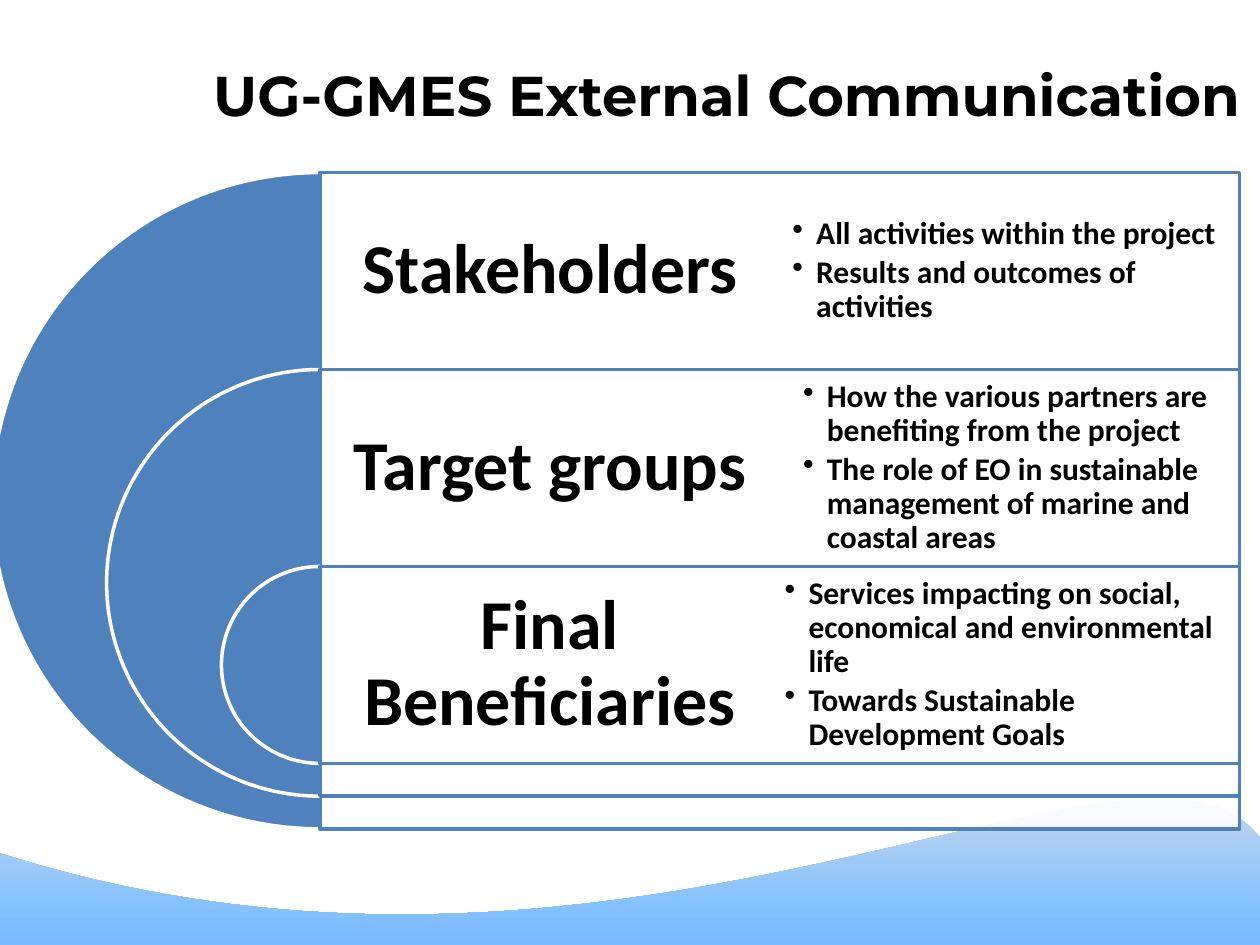
"""Build the UG-GMES external communication slide with nested half circles and panels."""
from lxml import etree
from pptx import Presentation
from pptx import util as u
from pptx.dml.color import RGBColor
from pptx.enum import shapes, text
from pptx.oxml import parse_xml
from pptx.oxml.ns import nsdecls, qn

TITLE = "UG-GMES External Communication"
AUDIENCES = [
    ("Stakeholders", 10.13, [
        "All activities within the project",
        "Results and outcomes of activities"]),
    ("Target groups", 9.7, [
        "How the various partners are benefiting from the project",
        "The role of EO in sustainable management of marine and coastal areas"]),
    ("Final Beneficiaries", 10.44, [
        "Services impacting on social, economical and environmental life",
        "Towards Sustainable Development Goals"]),
]
BLUE, WHITE, BLACK = "4F81BD", "FFFFFF", "000000"
WAVE_STOPS = [(0, "C4D6EB"), (72, "85C2FF"), (100, "7AB8FF")]
WAVE_CURVE = [(0, 17.2), (12.73, 21.26), (23.09, 13.74), (25.4, 16.89)]
WAVE_BOTTOM, WAVE_STEPS = 19.05, 80
TOP, ROW, CENTRE = 3.48, 3.97, 6.45
DIAMETER, DIAMETER_STEP = 13.23, 4.63
PANEL_WIDTH, HEADING_WIDTH, LIST_CENTRE = 18.54, 9.27, 20.36
INDENT = u.Cm(0.48)
HEADING_FONT = {"name": "Calibri", "size": u.Pt(40), "bold": True}
LIST_FONT = {**HEADING_FONT, "size": u.Pt(18)}
TITLE_FONT = {"name": "Montserrat", "size": u.Pt(32), "bold": True}


def box(*lengths):
    return [u.Cm(length) for length in lengths]


def paint(colour_format, colour):
    colour_format.rgb = RGBColor.from_string(colour)


def apply(target, values):
    for name, value in values.items():
        setattr(target, name, value)


def style_font(paragraph, values):
    apply(paragraph.font, values)
    paint(paragraph.font.color, BLACK)


def add_wave(slide):
    points = []
    for step in range(WAVE_STEPS + 1):
        t = step / WAVE_STEPS
        weights = ((1 - t) ** 3, 3 * t * (1 - t) ** 2, 3 * t * t * (1 - t), t ** 3)
        points.append(tuple(
            u.Cm(sum(w * point[axis] for w, point in zip(weights, WAVE_CURVE)))
            for axis in (0, 1)))
    right, bottom = u.Cm(WAVE_CURVE[-1][0]), u.Cm(WAVE_BOTTOM)
    builder = slide.shapes.build_freeform(*points[0])
    builder.add_line_segments(points[1:] + [(right, bottom), (0, bottom)], close=True)
    wave = builder.convert_to_shape()
    wave.shadow.inherit = False
    wave.line.fill.background()
    stops = "".join(
        f'<a:gs pos="{position * 1000}"><a:srgbClr val="{colour}"/></a:gs>'
        for position, colour in WAVE_STOPS)
    gradient = parse_xml(
        f'<a:gradFill {nsdecls("a")}><a:gsLst>{stops}</a:gsLst>'
        '<a:lin ang="5400000" scaled="0"/></a:gradFill>')
    wave.fill.background()
    no_fill = wave.element.spPr.find(qn("a:noFill"))
    wave.element.spPr.replace(no_fill, gradient)


def add_block(slide, kind, place, fill, line):
    block = slide.shapes.add_shape(kind, *box(*place))
    block.shadow.inherit = False
    block.fill.solid()
    paint(block.fill.fore_color, fill)
    paint(block.line.color, line)
    block.line.width = u.Pt(2)
    return block


def add_text(slide, place, margin, lines, font, align, bulleted=False):
    frame = slide.shapes.add_textbox(*box(*place)).text_frame
    apply(frame, {"word_wrap": True, "vertical_anchor": text.MSO_ANCHOR.MIDDLE,
                  "margin_left": u.Cm(margin), "margin_right": u.Cm(margin),
                  "margin_top": 0, "margin_bottom": 0})
    for index, line in enumerate(lines):
        paragraph = frame.add_paragraph() if index else frame.paragraphs[0]
        paragraph.text = line
        apply(paragraph, {"alignment": align, "line_spacing": 0.9})
        if bulleted:
            paragraph.space_after = u.Pt(2.7)
            properties = paragraph._p.get_or_add_pPr()
            properties.set("marL", str(INDENT))
            properties.set("indent", str(-INDENT))
            etree.SubElement(properties, qn("a:buChar")).set("char", "•")
        style_font(paragraph, font)


def add_audience(slide, index, heading, list_width, points):
    top = TOP + index * ROW
    size = DIAMETER - index * DIAMETER_STEP
    pie = add_block(slide, shapes.MSO_SHAPE.PIE,
                    (CENTRE - size / 2, top, size, size), BLUE, WHITE)
    pie.adjustments[0], pie.adjustments[1] = 54, 162
    panel = add_block(slide, shapes.MSO_SHAPE.RECTANGLE,
                      (CENTRE, top, PANEL_WIDTH, size), WHITE, BLUE)
    colour = panel.element.spPr.find(qn("a:solidFill"))[0]
    etree.SubElement(colour, qn("a:alpha")).set("val", "90000")
    add_text(slide, (CENTRE, top, HEADING_WIDTH, ROW), 0.43, [heading],
             HEADING_FONT, text.PP_ALIGN.CENTER)
    add_text(slide, (LIST_CENTRE - list_width / 2, top, list_width, ROW), 0.68,
             points, LIST_FONT, text.PP_ALIGN.LEFT, bulleted=True)


def main():
    deck = Presentation()
    deck.slide_width, deck.slide_height = box(25.4, 19.05)
    slide = deck.slides.add_slide(deck.slide_layouts[5])
    title = slide.shapes.title
    apply(title, dict(zip(("left", "top", "width", "height"),
                          box(1.27, 0.3, 24, 3.18))))
    title.text_frame.text = TITLE
    title.text_frame.vertical_anchor = text.MSO_ANCHOR.MIDDLE
    title.text_frame.paragraphs[0].alignment = text.PP_ALIGN.RIGHT
    style_font(title.text_frame.paragraphs[0], TITLE_FONT)
    add_wave(slide)
    for index, audience in enumerate(AUDIENCES):
        add_audience(slide, index, *audience)
    deck.save("out.pptx")


if __name__ == "__main__":
    main()
